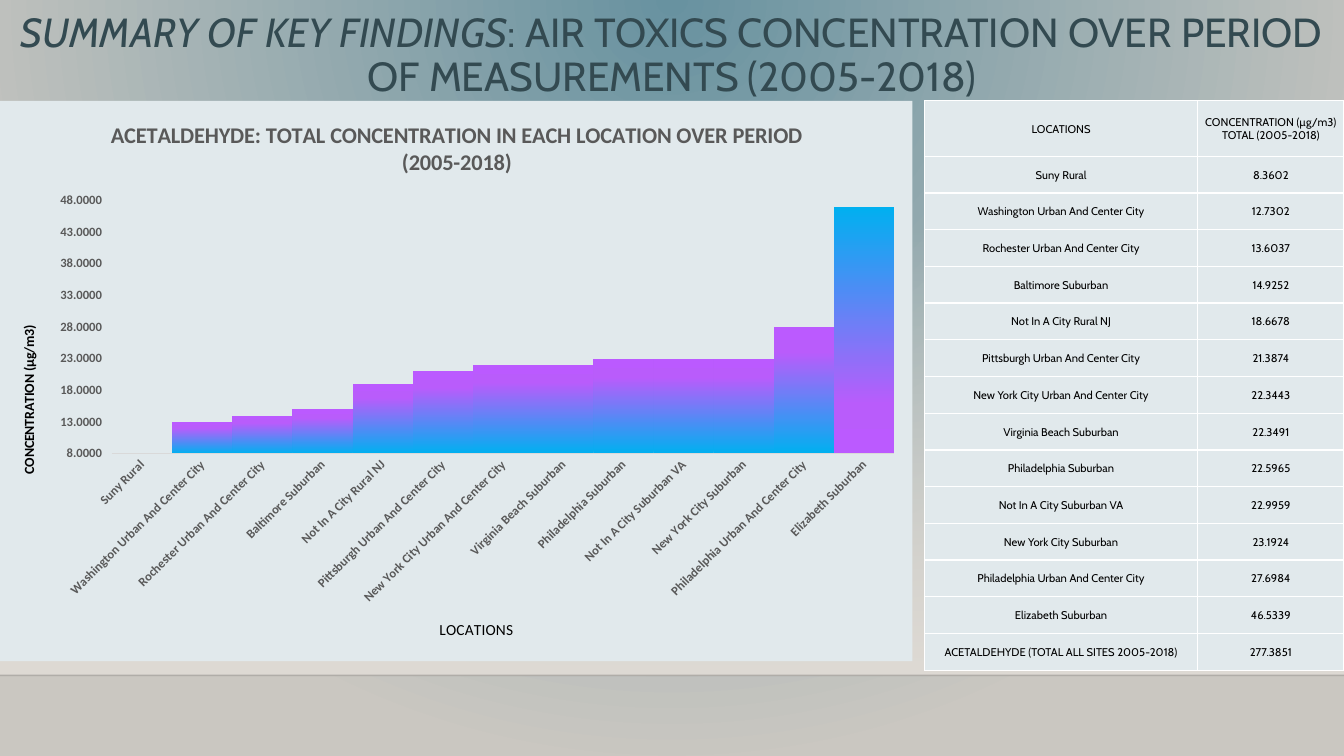
from dataclasses import dataclass

from lxml import etree
from pptx import Presentation
from pptx.chart.data import CategoryChartData
from pptx.dml.color import RGBColor
from pptx.enum.chart import XL_CHART_TYPE as ChartType, XL_TICK_MARK as TickMark
from pptx.enum.shapes import MSO_CONNECTOR as Connector, MSO_SHAPE as Preset
from pptx.enum.text import MSO_ANCHOR as Anchor, PP_ALIGN as Align
from pptx.oxml import parse_xml
from pptx.oxml.ns import nsdecls, qn
from pptx.util import Inches, Pt

BLACK = RGBColor(0x00, 0x00, 0x00)
WHITE = RGBColor(0xFF, 0xFF, 0xFF)
PANEL = RGBColor(0xE1, 0xE9, 0xEC)
TITLE = RGBColor(0x33, 0x4A, 0x51)
CHART_GRAY = RGBColor(0x59, 0x59, 0x59)
AXIS_GRAY = RGBColor(0xD9, 0xD9, 0xD9)
TEAL = RGBColor(0x68, 0x92, 0xA0)
STONE = RGBColor(0xCA, 0xC7, 0xC1)
SAND = RGBColor(0xDF, 0xDB, 0xD5)
SKY = RGBColor(0x00, 0xB0, 0xF0)
VIOLET = RGBColor(0xB9, 0x5C, 0xFB)
PURPLE = RGBColor(0xBB, 0x5A, 0xFF)


@dataclass(frozen=True)
class Site:
    name: str
    total: float


@dataclass(frozen=True)
class Stop:
    position: int
    color: RGBColor
    alpha: int = 100


SITES = [
    Site("Suny Rural", 8.3602),
    Site("Washington Urban And Center City", 12.7302),
    Site("Rochester Urban And Center City", 13.6037),
    Site("Baltimore Suburban", 14.9252),
    Site("Not In A City Rural NJ", 18.6678),
    Site("Pittsburgh Urban And Center City", 21.3874),
    Site("New York City Urban And Center City", 22.3443),
    Site("Virginia Beach Suburban", 22.3491),
    Site("Philadelphia Suburban", 22.5965),
    Site("Not In A City Suburban VA", 22.9959),
    Site("New York City Suburban", 23.1924),
    Site("Philadelphia Urban And Center City", 27.6984),
    Site("Elizabeth Suburban", 46.5339),
]
CHART_WIDTH, CHART_HEIGHT = 9.05, 5.56
BAR_STOPS = [Stop(0, SKY), Stop(80, VIOLET), Stop(100, PURPLE)]
LINEAR = '<a:lin {} ang="{}" scaled="0"/>'
CIRCLE = ('<a:path {} path="circle">'
          '<a:fillToRect l="43000" t="0" r="43000" b="100000"/></a:path>')


def write_text(paragraph, text: str, *, size: float, color: RGBColor,
               font: str = "Cabin", bold: bool = False, italic: bool = False) -> None:
    paragraph.alignment = Align.CENTER
    run = paragraph.add_run()
    run.text = text
    run.font.name, run.font.size = font, Pt(size)
    run.font.bold, run.font.italic = bold, italic
    run.font.color.rgb = color


def set_gradient(gradient, stops: list[Stop], shading: str) -> None:
    """Replace the stops and direction of a gradFill element."""
    for child in list(gradient):
        gradient.remove(child)
    stop_list = etree.SubElement(gradient, qn("a:gsLst"))
    for stop in stops:
        entry = etree.SubElement(stop_list, qn("a:gs"), pos=str(stop.position * 1000))
        color = etree.SubElement(entry, qn("a:srgbClr"), val=str(stop.color))
        if stop.alpha < 100:
            etree.SubElement(color, qn("a:alpha"), val=str(stop.alpha * 1000))
    gradient.append(parse_xml(shading))


def linear(degrees: int) -> str:
    return LINEAR.format(nsdecls("a"), degrees * 60000)


def set_layout(element, index: int, **inches: float) -> None:
    """Place a chart part, in inches from the chart's corner."""
    for old in element.findall(qn("c:layout")):
        element.remove(old)
    layout = parse_xml(f'<c:layout {nsdecls("c")}><c:manualLayout/></c:layout>')
    manual = layout[0]
    if "w" in inches:
        etree.SubElement(manual, qn("c:layoutTarget"), val="inner")
    for key in ("x", "y"):
        etree.SubElement(manual, qn(f"c:{key}Mode"), val="edge")
    for key, value in inches.items():
        whole = CHART_WIDTH if key in "xw" else CHART_HEIGHT
        etree.SubElement(manual, qn(f"c:{key}"), val=f"{value / whole:.4f}")
    element.insert(index, layout)


def panel_fill():
    return parse_xml(f'<c:spPr {nsdecls("c", "a")}><a:solidFill><a:srgbClr val="{PANEL}"/>'
                     '</a:solidFill><a:ln><a:noFill/></a:ln></c:spPr>')


def add_background(slide) -> None:
    slide.background.fill.gradient()
    set_gradient(slide.element.find(".//" + qn("a:gradFill")),
                 [Stop(0, TEAL), Stop(100, STONE)], CIRCLE.format(nsdecls("a")))
    wall = slide.shapes.add_shape(Preset.RECTANGLE, 0, Inches(2.21), Inches(13.33), Inches(4.49))
    wall.shadow.inherit = False
    wall.line.fill.background()
    wall.fill.gradient()
    set_gradient(wall.element.find(".//" + qn("a:gradFill")),
                 [Stop(0, SAND, 0), Stop(100, SAND)], linear(90))
    floor = slide.shapes.add_connector(Connector.STRAIGHT, 0, Inches(6.7),
                                       Inches(13.33), Inches(6.7))
    floor.line.width = Pt(1)
    floor.line.color.rgb = BLACK
    color = floor.element.find(".//" + qn("a:srgbClr"))
    etree.SubElement(color, qn("a:alpha"), val="20000")
    etree.SubElement(floor.element.spPr, qn("a:effectLst"))


def add_title(slide) -> None:
    box = slide.shapes.add_textbox(0, Inches(0.12), Inches(13.33), Inches(0.88))
    frame = box.text_frame
    frame.word_wrap = True
    frame.vertical_anchor = Anchor.MIDDLE
    paragraph = frame.paragraphs[0]
    paragraph.line_spacing = 0.9
    write_text(paragraph, "SUMMARY OF KEY FINDINGS", size=29, color=TITLE, italic=True)
    write_text(paragraph, ": AIR TOXICS CONCENTRATION OVER PERIOD OF MEASUREMENTS (2005-2018)",
               size=29, color=TITLE)


def format_cell(cell, text: str) -> None:
    cell.fill.solid()
    cell.fill.fore_color.rgb = PANEL
    cell.vertical_anchor = Anchor.MIDDLE
    cell.margin_left = cell.margin_right = cell.margin_top = Inches(0.01)
    cell.margin_bottom = 0
    write_text(cell.text_frame.paragraphs[0], text, size=8, color=BLACK)
    properties = cell._tc.get_or_add_tcPr()
    for index, side in enumerate(("lnL", "lnR", "lnT", "lnB")):
        properties.insert(index, parse_xml(
            f'<a:{side} {nsdecls("a")} w="12700"><a:solidFill>'
            f'<a:srgbClr val="{WHITE}"/></a:solidFill></a:{side}>'))


def add_site_table(slide) -> None:
    rows = [("LOCATIONS", "CONCENTRATION (µg/m3) TOTAL (2005-2018)")]
    rows += [(site.name, f"{site.total:.4f}") for site in SITES]
    rows.append(("ACETALDEHYDE (TOTAL ALL SITES 2005-2018)", "277.3851"))
    table = slide.shapes.add_table(len(rows), 2, Inches(9.17), Inches(1),
                                   Inches(4.16), Inches(5.65)).table
    table.first_row = table.horz_banding = False
    table.columns[0].width, table.columns[1].width = Inches(2.71), Inches(1.45)
    for index, values in enumerate(rows):
        table.rows[index].height = Inches(5.1 / (len(rows) - 1) if index else 0.55)
        for column, text in enumerate(values):
            format_cell(table.cell(index, column), text)


def add_site_chart(slide) -> None:
    data = CategoryChartData(number_format="0.0000")
    data.categories = [site.name for site in SITES]
    data.add_series("Series 1", [round(site.total) for site in SITES])
    chart = slide.shapes.add_chart(ChartType.COLUMN_CLUSTERED, 0, Inches(1),
                                   Inches(CHART_WIDTH), Inches(CHART_HEIGHT), data).chart
    chart.has_legend = False
    chart.font.name, chart.font.size, chart.font.color.rgb = "Calibri", Pt(10), BLACK

    # Bars, with the last gradient reversed
    plot = chart.plots[0]
    plot.gap_width, plot.vary_by_categories = 0, False
    series = plot.series[0]
    series.invert_if_negative = False
    series.format.fill.gradient()
    series.points[len(SITES) - 1].format.fill.gradient()
    for gradient, degrees in zip(list(chart.element.iter(qn("a:gradFill"))), (270, 90)):
        set_gradient(gradient, BAR_STOPS, linear(degrees))

    # Axes
    places, values = chart.category_axis, chart.value_axis
    for axis in (places, values):
        axis.has_major_gridlines = False
        font = axis.tick_labels.font
        font.name, font.size, font.bold, font.color.rgb = "Calibri", Pt(9), True, CHART_GRAY
    places.major_tick_mark = TickMark.NONE
    places.format.line.color.rgb, places.format.line.width = AXIS_GRAY, Pt(1)
    values.minimum_scale, values.maximum_scale, values.major_unit = 8, 48, 5
    values.major_tick_mark = TickMark.OUTSIDE
    values.format.line.fill.background()
    values.tick_labels.number_format = "0.0000"
    values.tick_labels.number_format_is_linked = False
    label_body = chart.element.find(f'.//{qn("c:catAx")}/{qn("c:txPr")}/{qn("a:bodyPr")}')
    label_body.set("rot", "-2700000")
    label_body.set("vert", "horz")

    # Titles
    heading = "ACETALDEHYDE: TOTAL CONCENTRATION IN EACH LOCATION OVER PERIOD (2005-2018)"
    for title, text, size, bold, color, x, y in (
            (chart.chart_title, heading, 16, True, CHART_GRAY, 1.06, 0.15),
            (places.axis_title, "LOCATIONS", 11, False, BLACK, 4.33, 5.11),
            (values.axis_title, "CONCENTRATION (µg/m3)", 10, True, BLACK, 0.17, 2.2)):
        write_text(title.text_frame.paragraphs[0], text, size=size, color=color,
                   font="Calibri", bold=bold)
        set_layout(title.element, 1, x=x, y=y)
    title_body = values.axis_title.element.find(".//" + qn("a:bodyPr"))
    title_body.set("rot", "-5400000")
    title_body.set("vert", "horz")

    # Panel behind the bars
    plot_area = chart.element.find(".//" + qn("c:plotArea"))
    set_layout(plot_area, 0, x=1.11, y=0.99, w=7.76, h=2.51)
    plot_area.append(panel_fill())
    chart.element.find(qn("c:chart")).addnext(panel_fill())


def main() -> None:
    presentation = Presentation()
    presentation.slide_width, presentation.slide_height = Inches(13.33), Inches(7.5)
    slide = presentation.slides.add_slide(presentation.slide_layouts[6])
    add_background(slide)
    add_title(slide)
    add_site_table(slide)
    add_site_chart(slide)
    presentation.save("out.pptx")


if __name__ == "__main__":
    main()
